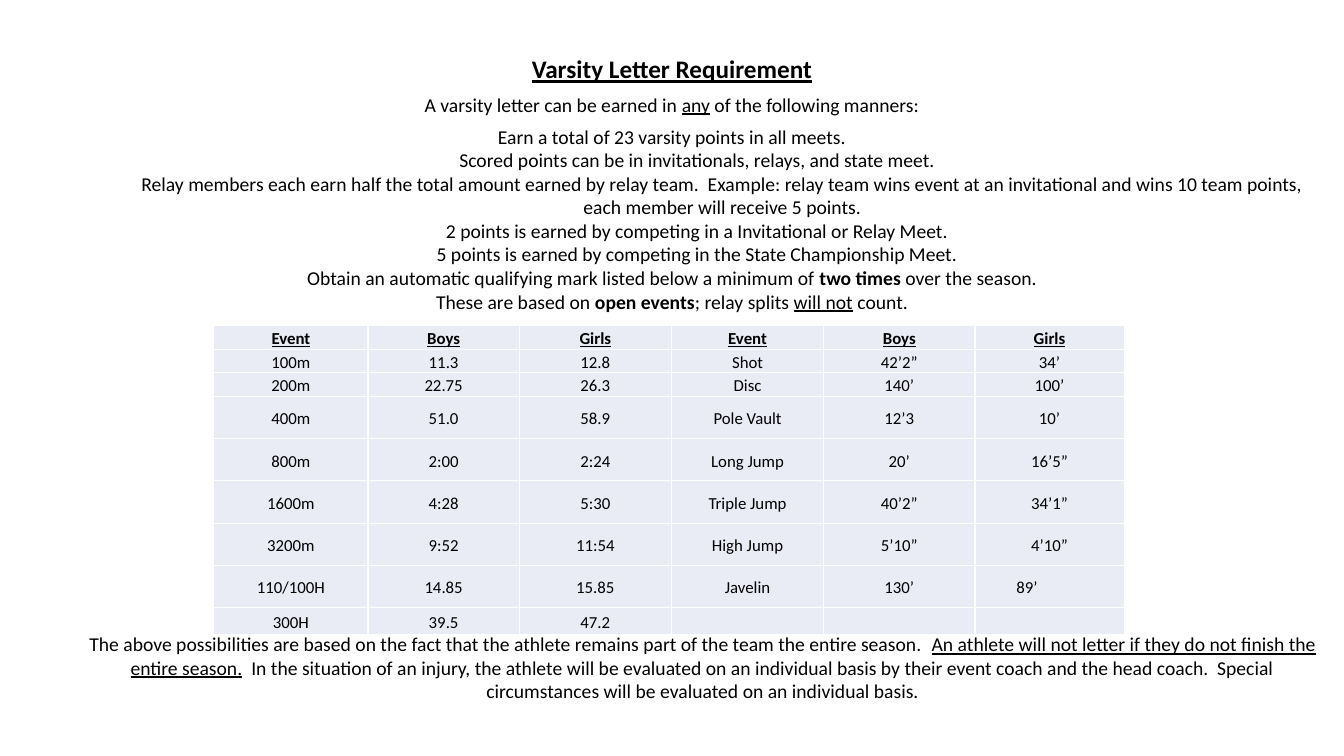
from lxml import etree
from pptx import Presentation
from pptx.dml.color import RGBColor
from pptx.enum.text import MSO_ANCHOR, MSO_AUTO_SIZE, PP_ALIGN
from pptx.oxml.ns import qn
from pptx.util import Inches, Pt

BLACK = RGBColor(0x00, 0x00, 0x00)
WHITE = RGBColor(0xFF, 0xFF, 0xFF)
PALE = RGBColor(0xE9, 0xEB, 0xF5)


def place(box, left, top, width, height):
    box.left, box.top = Inches(left), Inches(top)
    box.width, box.height = Inches(width), Inches(height)
    frame = box.text_frame
    frame.word_wrap = True
    frame.auto_size = MSO_AUTO_SIZE.NONE
    frame.vertical_anchor = MSO_ANCHOR.TOP
    return frame


def write(para, parts, size):
    """Fill a centred paragraph with (text, style) parts; style is "", "b", "u" or "bu"."""
    para.alignment = PP_ALIGN.CENTER
    para.space_before = Pt(0)
    for text, style in parts:
        run = para.add_run()
        run.text = text
        font = run.font
        font.name, font.size = "Calibri", Pt(size)
        font.bold, font.underline = "b" in style, "u" in style
        font.color.rgb = BLACK


prs = Presentation()
prs.slide_width, prs.slide_height = Inches(13.33), Inches(7.5)
slide = prs.slides.add_slide(prs.slide_layouts[1])

# Title
frame = place(slide.shapes.title, 0.16, 0.48, 13.01, 0.4)
write(frame.paragraphs[0], [("Varsity Letter Requirement", "bu")], 18)

# Ways to earn a letter: indent level, then text parts
rules = [
    (0, [("A varsity letter can be earned in ", ""), ("any", "u"),
         (" of the following manners:", "")]),
    (0, [("Earn a total of 23 varsity points in all meets.", "")]),
    (1, [("Scored points can be in invitationals, relays, and state meet.", "")]),
    (2, [("Relay members each earn half the total amount earned by relay team.  "
          "Example: relay team wins event at an invitational and wins 10 team points, "
          "each member will receive 5 points.", "")]),
    (1, [("2 points is earned by competing in a Invitational or Relay Meet.", "")]),
    (1, [("5 points is earned by competing in the State Championship Meet.", "")]),
    (0, [("Obtain an automatic qualifying mark listed below a minimum of ", ""),
         ("two times", "b"), (" over the season.", "")]),
    (0, [("These are based on ", ""), ("open events", "b"), ("; relay splits ", ""),
         ("will not", "u"), (" count.", "")]),
]
frame = place(slide.placeholders[1], 0.16, 0.87, 13.01, 2.3)
for i, (level, parts) in enumerate(rules):
    para = frame.add_paragraph() if i else frame.paragraphs[0]
    para.level = level
    write(para, parts, 14)
    para.space_after = Pt(0 if i else 6)
    props = para._p.get_or_add_pPr()
    props.set("marL", str(Inches(0.5 * level)))
    props.set("indent", "0")
    etree.SubElement(props, qn("a:buNone"))

# Qualifying marks
marks = [
    ["Event", "Boys", "Girls", "Event", "Boys", "Girls"],
    ["100m", "11.3", "12.8", "Shot", "42’2”", "34’"],
    ["200m", "22.75", "26.3", "Disc", "140’", "100’"],
    ["400m", "51.0", "58.9", "Pole Vault", "12’3", "10’"],
    ["800m", "2:00", "2:24", "Long Jump", "20’", "16’5”"],
    ["1600m", "4:28", "5:30", "Triple Jump", "40’2”", "34’1”"],
    ["3200m", "9:52", "11:54", "High Jump", "5’10”", "4’10”"],
    ["110/100H", "14.85", "15.85", "Javelin", "130’", "89’"],
    ["300H", "39.5", "47.2", "", "", ""],
]
widths = [1.53, 1.5, 1.51, 1.51, 1.5, 1.48]
heights = [0.23] * 3 + [0.42] * 5 + [0.27]
table = slide.shapes.add_table(len(heights), len(widths), Inches(2.12), Inches(3.23),
                               Inches(sum(widths)), Inches(sum(heights))).table
table.first_row = table.horz_banding = False
for col, width in zip(table.columns, widths):
    col.width = Inches(width)
for r, (row, height) in enumerate(zip(marks, heights)):
    table.rows[r].height = Inches(height)
    for c, text in enumerate(row):
        cell = table.cell(r, c)
        cell.vertical_anchor = MSO_ANCHOR.MIDDLE
        cell.margin_left = cell.margin_right = Inches(0.07)
        cell.margin_top = cell.margin_bottom = 0
        para = cell.text_frame.paragraphs[0]
        if text:
            write(para, [(text, "" if r else "bu")], 12)
        else:
            etree.SubElement(para._p, qn("a:endParaRPr"), sz="1200")
        para.line_spacing = 1.15
        para.space_before = para.space_after = Pt(6)
        # White cell borders, then the fill
        for side in ("lnL", "lnR", "lnT", "lnB"):
            line = etree.SubElement(cell._tc.get_or_add_tcPr(), qn("a:" + side),
                                    w=str(Pt(1)))
            solid = etree.SubElement(line, qn("a:solidFill"))
            etree.SubElement(solid, qn("a:srgbClr"), val=str(WHITE))
        cell.fill.solid()
        cell.fill.fore_color.rgb = PALE

# The javelin mark for girls is set from the left
javelin = table.cell(7, 5)
javelin.margin_left = Inches(0.41)
javelin.text_frame.paragraphs[0].alignment = PP_ALIGN.LEFT

# Closing note
note = slide.shapes.add_textbox(0, 0, 0, 0)
frame = place(note, 0.76, 6.22, 12.42, 0.81)
write(frame.paragraphs[0], [
    ("The above possibilities are based on the fact that the athlete remains part of "
     "the team the entire season.  ", ""),
    ("An athlete will not letter if they do not finish the entire season.", "u"),
    ("  In the situation of an injury, the athlete will be evaluated on an individual "
     "basis by their event coach and the head coach.  Special circumstances will be "
     "evaluated on an individual basis.", ""),
], 14)

prs.save("out.pptx")
